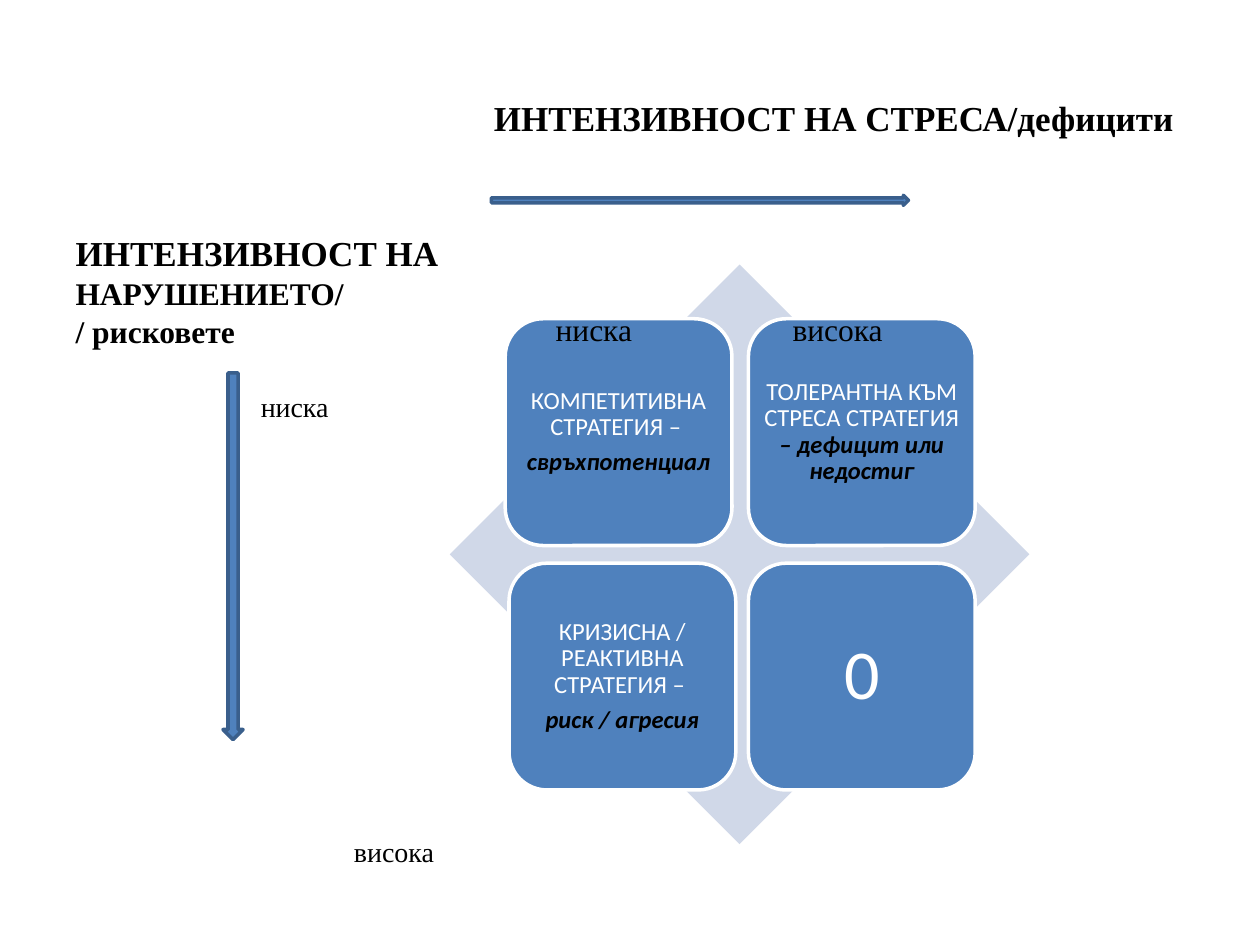
from pptx import Presentation
from pptx.dml.color import RGBColor
from pptx.enum.shapes import MSO_SHAPE
from pptx.enum.text import MSO_ANCHOR, PP_ALIGN
from pptx.util import Inches, Pt

DIAMOND = MSO_SHAPE.DIAMOND
ROUNDED = MSO_SHAPE.ROUNDED_RECTANGLE
DOWN_ARROW = MSO_SHAPE.DOWN_ARROW
RIGHT_ARROW = MSO_SHAPE.RIGHT_ARROW
MIDDLE = MSO_ANCHOR.MIDDLE
LEFT, CENTER = PP_ALIGN.LEFT, PP_ALIGN.CENTER

BLACK = RGBColor(0x00, 0x00, 0x00)
WHITE = RGBColor(0xFF, 0xFF, 0xFF)
BLUE = RGBColor(0x4F, 0x81, 0xBD)
DARK_BLUE = RGBColor(0x3A, 0x5F, 0x8C)
PALE_BLUE = RGBColor(0xD0, 0xD8, 0xE8)


class Slide:
    heading_font = "Times New Roman"
    card_font = "Calibri"
    card_size = 1.8

    def __init__(self, prs):
        self.s = prs.slides.add_slide(prs.slide_layouts[5])

    def style(self, font, name, size, color, bold=False, italic=False):
        font.name, font.size = name, Pt(size)
        font.color.rgb = color
        font.bold, font.italic = bold, italic

    def margins(self, tf, margin):
        tf.margin_left = tf.margin_right = Inches(margin)
        tf.margin_top = tf.margin_bottom = Inches(margin)

    def title(self, text, x, y, w, h, size):
        sp = self.s.shapes.title
        sp.left, sp.top, sp.width, sp.height = map(Inches, (x, y, w, h))
        tf = sp.text_frame
        tf.text = text
        tf.vertical_anchor = MIDDLE
        self.margins(tf, 0)
        p = tf.paragraphs[0]
        p.alignment = LEFT
        self.style(p.font, self.heading_font, size, BLACK, bold=True)

    def label(self, lines, x, y, w, h, bold=False):
        sp = self.s.shapes.add_textbox(*map(Inches, (x, y, w, h)))
        tf = sp.text_frame
        tf.word_wrap = True
        self.margins(tf, 0)
        for i, (text, size) in enumerate(lines):
            p = tf.add_paragraph() if i else tf.paragraphs[0]
            p.text = text
            self.style(p.font, self.heading_font, size, BLACK, bold)

    def shape(self, kind, x, y, w, h, fill, line=None):
        sp = self.s.shapes.add_shape(kind, *map(Inches, (x, y, w, h)))
        sp.shadow.inherit = False
        sp.fill.solid()
        sp.fill.fore_color.rgb = fill
        if line is None:
            sp.line.fill.background()
        else:
            sp.line.color.rgb = line
            sp.line.width = Pt(2)
        return sp

    def card(self, x, y, paragraphs, size=14):
        sp = self.shape(ROUNDED, x, y, self.card_size, self.card_size, BLUE, WHITE)
        tf = sp.text_frame
        tf.word_wrap = True
        tf.vertical_anchor = MIDDLE
        self.margins(tf, 0.02)
        for i, runs in enumerate(paragraphs):
            p = tf.add_paragraph() if i else tf.paragraphs[0]
            p.alignment = CENTER
            p.line_spacing = 0.9
            p.space_after = Pt(size * 0.35)
            for text, strong in runs:
                r = p.add_run()
                r.text = text
                color = BLACK if strong else WHITE
                self.style(r.font, self.card_font, size, color, strong, strong)


def main():
    prs = Presentation()
    prs.slide_width, prs.slide_height = Inches(10), Inches(7.5)
    s = Slide(prs)

    s.title("ИНТЕНЗИВНОСТ НА СТРЕСА/дефицити", 3.92, 0.73, 5.6, 0.4, 20)

    s.shape(DIAMOND, 3.57, 2.1, 4.6, 4.6, PALE_BLUE)
    top, bottom, right = 2.53, 4.47, 5.94
    s.card(4.01, top, [[("КОМПЕТИТИВНА СТРАТЕГИЯ – ", False)],
                       [("свръхпотенциал", True)]])
    s.card(right, top, [[("ТОЛЕРАНТНА КЪМ СТРЕСА СТРАТЕГИЯ ", False),
                         ("– дефицит или недостиг", True)]])
    s.card(4.04, bottom, [[("КРИЗИСНА / РЕАКТИВНА СТРАТЕГИЯ – ", False)],
                          [("риск / агресия", True)]])
    s.card(right, bottom, [[("0", False)]], size=40)

    s.label([("ИНТЕНЗИВНОСТ НА", 20), ("НАРУШЕНИЕТО/", 18), ("/ рисковете", 18)],
            0.6, 1.84, 3.2, 0.95, bold=True)
    for text, size, x, y in [("ниска", 18, 4.41, 2.46), ("висока", 18, 6.29, 2.46),
                             ("ниска", 16, 2.07, 3.09), ("висока", 16, 2.81, 6.62)]:
        s.label([(text, size)], x, y, 1, 0.3)

    s.shape(DOWN_ARROW, 1.77, 2.96, 0.16, 2.91, BLUE, DARK_BLUE)
    s.shape(RIGHT_ARROW, 3.9, 1.55, 3.31, 0.08, BLUE, DARK_BLUE)

    prs.save("out.pptx")


if __name__ == "__main__":
    main()
